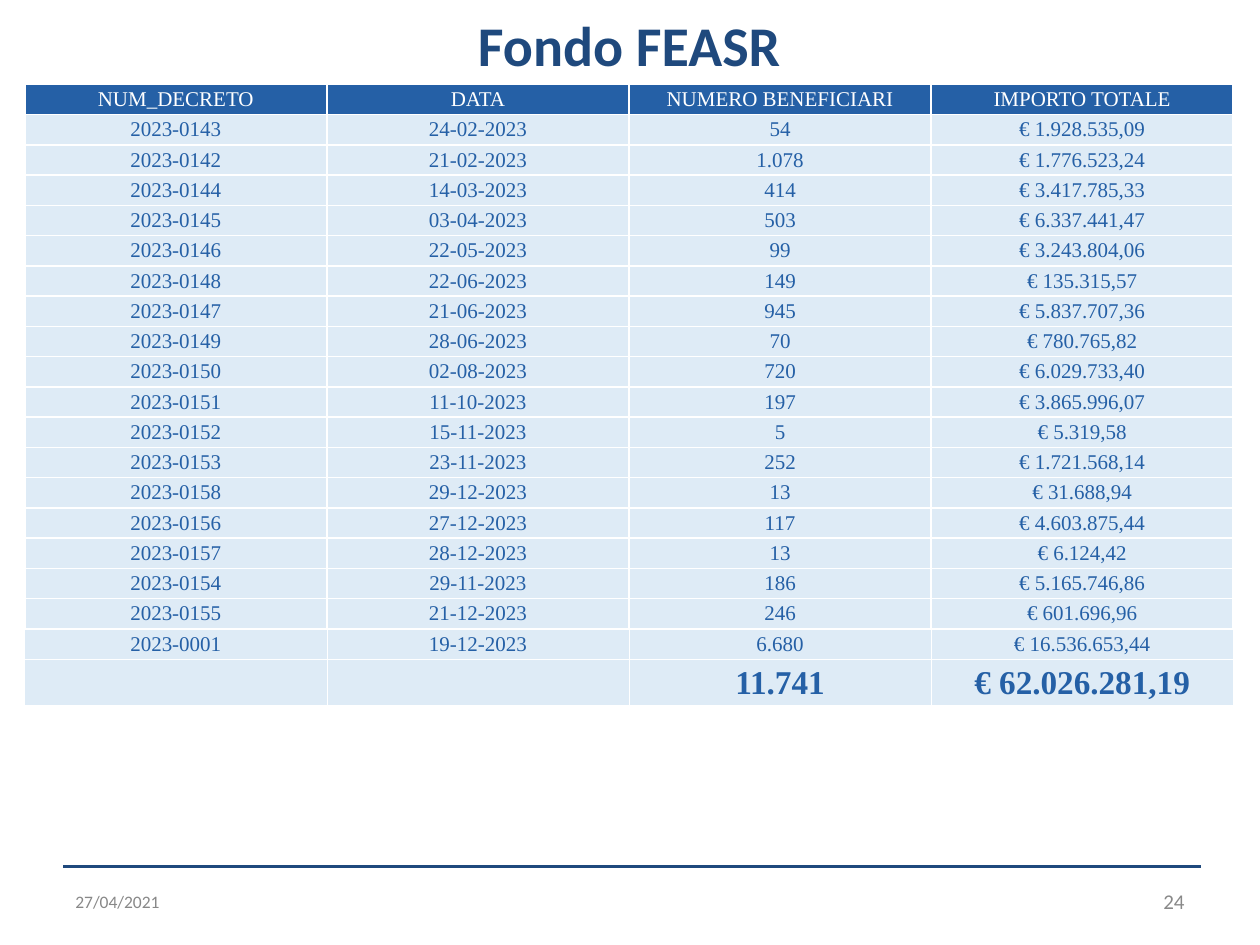
from lxml.etree import SubElement
from pptx import Presentation
from pptx.dml.color import RGBColor
from pptx.enum.shapes import MSO_CONNECTOR
from pptx.enum.text import MSO_ANCHOR, PP_ALIGN
from pptx.oxml.ns import qn
from pptx.util import Cm, Pt

COLORS = {"navy": "1F497D", "blue": "2560A6", "pale": "DEEBF6", "white": "FFFFFF",
          "date": "888888", "number": "898989"}

HEADER = ("NUM_DECRETO", "DATA", "NUMERO BENEFICIARI", "IMPORTO TOTALE")
DECREES = [
    ("2023-0143", "24-02-2023", "54", "€ 1.928.535,09"),
    ("2023-0142", "21-02-2023", "1.078", "€ 1.776.523,24"),
    ("2023-0144", "14-03-2023", "414", "€ 3.417.785,33"),
    ("2023-0145", "03-04-2023", "503", "€ 6.337.441,47"),
    ("2023-0146", "22-05-2023", "99", "€ 3.243.804,06"),
    ("2023-0148", "22-06-2023", "149", "€ 135.315,57"),
    ("2023-0147", "21-06-2023", "945", "€ 5.837.707,36"),
    ("2023-0149", "28-06-2023", "70", "€ 780.765,82"),
    ("2023-0150", "02-08-2023", "720", "€ 6.029.733,40"),
    ("2023-0151", "11-10-2023", "197", "€ 3.865.996,07"),
    ("2023-0152", "15-11-2023", "5", "€ 5.319,58"),
    ("2023-0153", "23-11-2023", "252", "€ 1.721.568,14"),
    ("2023-0158", "29-12-2023", "13", "€ 31.688,94"),
    ("2023-0156", "27-12-2023", "117", "€ 4.603.875,44"),
    ("2023-0157", "28-12-2023", "13", "€ 6.124,42"),
    ("2023-0154", "29-11-2023", "186", "€ 5.165.746,86"),
    ("2023-0155", "21-12-2023", "246", "€ 601.696,96"),
    ("2023-0001", "19-12-2023", "6.680", "€ 16.536.653,44"),
]
TOTALS = ("", "", "11.741", "€ 62.026.281,19")

TITLE_FORMAT = {"name": "Calibri", "size": Pt(32), "bold": True}
DATE_FORMAT = {"name": "Calibri", "size": Pt(10)}
NUMBER_FORMAT = {"name": "Calibri", "size": Pt(12)}
CELL_FORMAT = {"name": "Times New Roman", "size": Pt(12), "bold": False}
TOTAL_FORMAT = {"name": "Times New Roman", "size": Pt(19), "bold": True}


def color(name):
    return RGBColor.from_string(COLORS[name])


def write(paragraph, text, font_format, color_name, alignment):
    paragraph.alignment = alignment
    run = paragraph.add_run()
    run.text = text
    for attribute, value in font_format.items():
        setattr(run.font, attribute, value)
    run.font.color.rgb = color(color_name)


def add_text(slide, box, text, font_format, color_name, alignment, anchor):
    shape = slide.shapes.add_textbox(*box)
    shape.text_frame.word_wrap = True
    shape.text_frame.vertical_anchor = anchor
    write(shape.text_frame.paragraphs[0], text, font_format, color_name, alignment)


def set_borders(cell, width):
    properties = cell._tc.get_or_add_tcPr()
    for position, side in enumerate(("a:lnL", "a:lnR", "a:lnT", "a:lnB")):
        line = SubElement(properties, qn(side), w=str(int(width)))
        fill = SubElement(line, qn("a:solidFill"))
        SubElement(fill, qn("a:srgbClr"), val=COLORS["white"])
        properties.remove(line)
        properties.insert(position, line)  # borders come before the fill


def add_decree_table(slide, left, top, width, row_height):
    rows = [HEADER, *DECREES, TOTALS]
    frame = slide.shapes.add_table(len(rows), len(HEADER), left, top,
                                   width, row_height * len(rows))
    table = frame.table
    for row_index, values in enumerate(rows):
        is_header, is_total = values is HEADER, values is TOTALS
        for column_index, text in enumerate(values):
            cell = table.cell(row_index, column_index)
            for side in ("left", "right", "top", "bottom"):
                setattr(cell, f"margin_{side}", 0)
            cell.fill.solid()
            cell.fill.fore_color.rgb = color("blue" if is_header else "pale")
            set_borders(cell, Pt(0.47) if row_index >= len(rows) - 2 else Pt(1))
            if text:
                paragraph = cell.text_frame.paragraphs[0]
                paragraph.line_spacing = 1.15
                write(paragraph, text, TOTAL_FORMAT if is_total else CELL_FORMAT,
                      "white" if is_header else "blue", PP_ALIGN.CENTER)


def add_footer(slide, left, top, width, height):
    # Rule across the top of the footer
    rule = slide.shapes.add_connector(MSO_CONNECTOR.STRAIGHT, left, top, left + width, top)
    rule.line.color.rgb = color("navy")
    rule.line.width = Pt(1.5)
    SubElement(rule._element.spPr, qn("a:effectLst"))

    # Date on the left, slide number on the right
    text_width, text_height = Cm(5.93), Cm(1.01)
    text_top = top + height - text_height
    number_left = left + width - text_width - Cm(0.08)
    add_text(slide, (left, text_top, text_width, text_height), "27/04/2021",
             DATE_FORMAT, "date", PP_ALIGN.LEFT, MSO_ANCHOR.MIDDLE)
    add_text(slide, (number_left, text_top, text_width, text_height), "24",
             NUMBER_FORMAT, "number", PP_ALIGN.RIGHT, MSO_ANCHOR.MIDDLE)


def main():
    presentation = Presentation()
    presentation.slide_width, presentation.slide_height = Cm(25.4), Cm(19.05)
    slide = presentation.slides.add_slide(presentation.slide_layouts[6])

    add_footer(slide, Cm(1.27), Cm(17.47), Cm(22.94), Cm(1.2))
    add_text(slide, (Cm(0.25), Cm(0.08), Cm(24.87), Cm(2.06)), "Fondo FEASR",
             TITLE_FORMAT, "navy", PP_ALIGN.CENTER, MSO_ANCHOR.TOP)
    add_decree_table(slide, Cm(0.5), Cm(1.7), Cm(24.36), Cm(0.61))

    presentation.save("out.pptx")


if __name__ == "__main__":
    main()
